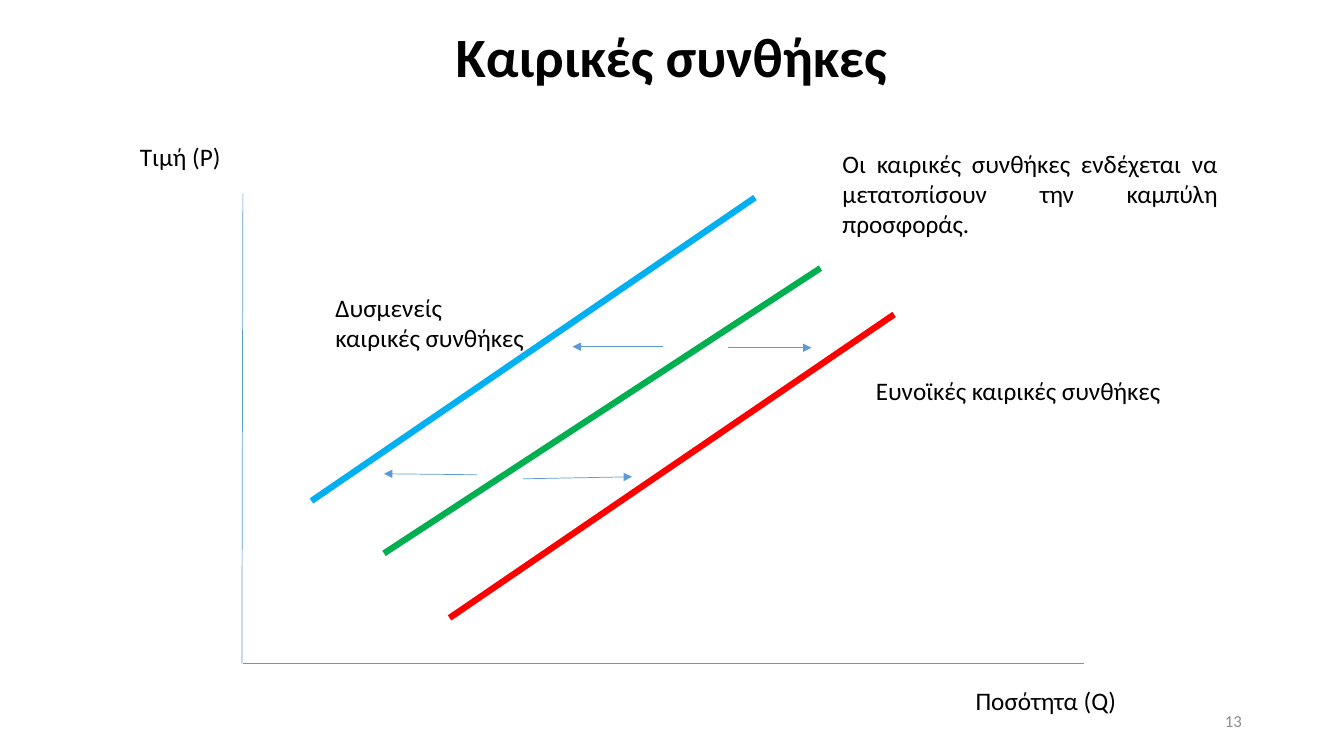
"""Build a slide on how weather conditions shift the supply curve."""
from typing import Any, NamedTuple

from lxml import etree
from pptx import Presentation
from pptx.dml.color import RGBColor
from pptx.enum.shapes import MSO_CONNECTOR
from pptx.enum.text import MSO_ANCHOR, MSO_AUTO_SIZE, PP_ALIGN
from pptx.oxml.ns import qn
from pptx.util import Inches, Pt

STRAIGHT = MSO_CONNECTOR.STRAIGHT
TOP, MIDDLE = MSO_ANCHOR.TOP, MSO_ANCHOR.MIDDLE
LEFT, CENTER, RIGHT = PP_ALIGN.LEFT, PP_ALIGN.CENTER, PP_ALIGN.RIGHT
JUSTIFY = PP_ALIGN.JUSTIFY
NO_FIT, GROW = MSO_AUTO_SIZE.NONE, MSO_AUTO_SIZE.SHAPE_TO_FIT_TEXT

COLUMNS, ROWS = 80, 45
SLIDE_WIDTH, SLIDE_HEIGHT = Inches(13.33), Inches(7.5)
FONT = "Calibri"
BLACK, GREY, AXIS_BLUE = "000000", "8C8C8C", "5B9BD5"
GREEN, RED, SKY = "00B050", "FF0000", "00B0F0"


class Box(NamedTuple):
    """Place and size in grid columns and rows."""
    column: float
    row: float
    columns: float
    rows: float


class Segment(NamedTuple):
    """Straight line between two grid points."""
    start: tuple[float, float]
    end: tuple[float, float]
    color: str = AXIS_BLUE
    weight: float = 0.5
    arrow: bool = False


class Label(NamedTuple):
    """Text beside the diagram."""
    text: str
    box: Box
    align: PP_ALIGN = LEFT


AXES = [
    Segment((14.46, 11.52), (14.4, 39.48)),
    Segment((64.5, 39.48), (14.46, 39.48)),
]
SUPPLY_CURVES = [
    Segment((22.86, 32.94), (48.84, 15.96), GREEN, 4.5),
    Segment((26.76, 36.78), (53.22, 18.72), RED, 4.5),
    Segment((18.54, 29.82), (44.94, 11.76), SKY, 4.5),
]
SHIFTS = [
    Segment((43.32, 20.7), (48.3, 20.7), arrow=True),
    Segment((31.14, 28.5), (37.62, 28.38), arrow=True),
    Segment((39.48, 20.64), (34.08, 20.64), arrow=True),
    Segment((28.38, 28.26), (22.86, 28.2), arrow=True),
]
LABELS = [
    Label("Τιμή (P)", Box(7.74, 8.1, 6.72, 2.4)),
    Label("Ποσότητα (Q)", Box(57.48, 40.5, 10.44, 2.4)),
    Label("Οι καιρικές συνθήκες ενδέχεται να μετατοπίσουν την καμπύλη προσφοράς.",
          Box(49.56, 8.52, 23.52, 6.06), JUSTIFY),
    Label("Ευνοϊκές καιρικές συνθήκες", Box(51.54, 22.02, 19.5, 2.4)),
    Label("Δυσμενείς καιρικές συνθήκες", Box(19.38, 17.1, 12.66, 4.26)),
]


def across(columns: float) -> int:
    """Turn grid columns into a length."""
    return round(SLIDE_WIDTH * columns / COLUMNS)


def down(rows: float) -> int:
    """Turn grid rows into a length."""
    return round(SLIDE_HEIGHT * rows / ROWS)


def rgb(color: str) -> RGBColor:
    """Turn a hex string into a colour."""
    return RGBColor.from_string(color)


def write(holder: Any, text: str, *, size: float = 18, color: str = BLACK,
          bold: bool = False, align: PP_ALIGN = LEFT, anchor: MSO_ANCHOR = TOP,
          fit: MSO_AUTO_SIZE = GROW, spacing: float = 1.0) -> None:
    """Put formatted text into a shape."""
    frame = holder.text_frame
    frame.text = text
    frame.word_wrap = True
    frame.auto_size = fit
    frame.vertical_anchor = anchor
    paragraph = frame.paragraphs[0]
    paragraph.alignment = align
    paragraph.line_spacing = spacing
    font = paragraph.runs[0].font
    font.name, font.size, font.bold = FONT, Pt(size), bold
    font.color.rgb = rgb(color)


def add_text(slide: Any, text: str, box: Box, **style: Any) -> None:
    """Add a text box on the grid."""
    holder = slide.shapes.add_textbox(across(box.column), down(box.row),
                                      across(box.columns), down(box.rows))
    write(holder, text, **style)


def add_title(slide: Any, text: str, box: Box) -> None:
    """Place and fill the title."""
    title = slide.shapes.title
    title.left, title.top = across(box.column), down(box.row)
    title.width, title.height = across(box.columns), down(box.rows)
    write(title, text, size=39.6, bold=True, align=CENTER, anchor=MIDDLE,
          fit=NO_FIT, spacing=0.9)


def add_segment(slide: Any, segment: Segment) -> None:
    """Draw a line, with an arrowhead at its end if asked."""
    (x1, y1), (x2, y2) = segment.start, segment.end
    connector = slide.shapes.add_connector(
        STRAIGHT, across(x1), down(y1), across(x2), down(y2))
    connector.line.color.rgb = rgb(segment.color)
    connector.line.width = Pt(segment.weight)
    properties = connector.line._get_or_add_ln()
    if segment.arrow:
        etree.SubElement(properties, qn("a:tailEnd"), type="triangle")
    etree.SubElement(properties.getparent(), qn("a:effectLst"))


def main() -> None:
    """Build and save the slide."""
    deck = Presentation()
    deck.slide_width, deck.slide_height = SLIDE_WIDTH, SLIDE_HEIGHT
    slide = deck.slides.add_slide(deck.slide_layouts[5])
    add_title(slide, "Καιρικές συνθήκες", Box(14.1, 1.5, 51.72, 4.08))
    add_text(slide, "13", Box(56.52, 41.7, 18, 2.4), size=12, color=GREY,
             align=RIGHT, anchor=MIDDLE, fit=NO_FIT)
    for segment in AXES + SUPPLY_CURVES + SHIFTS:
        add_segment(slide, segment)
    for label in LABELS:
        add_text(slide, label.text, label.box, align=label.align)
    deck.save("out.pptx")


if __name__ == "__main__":
    main()
